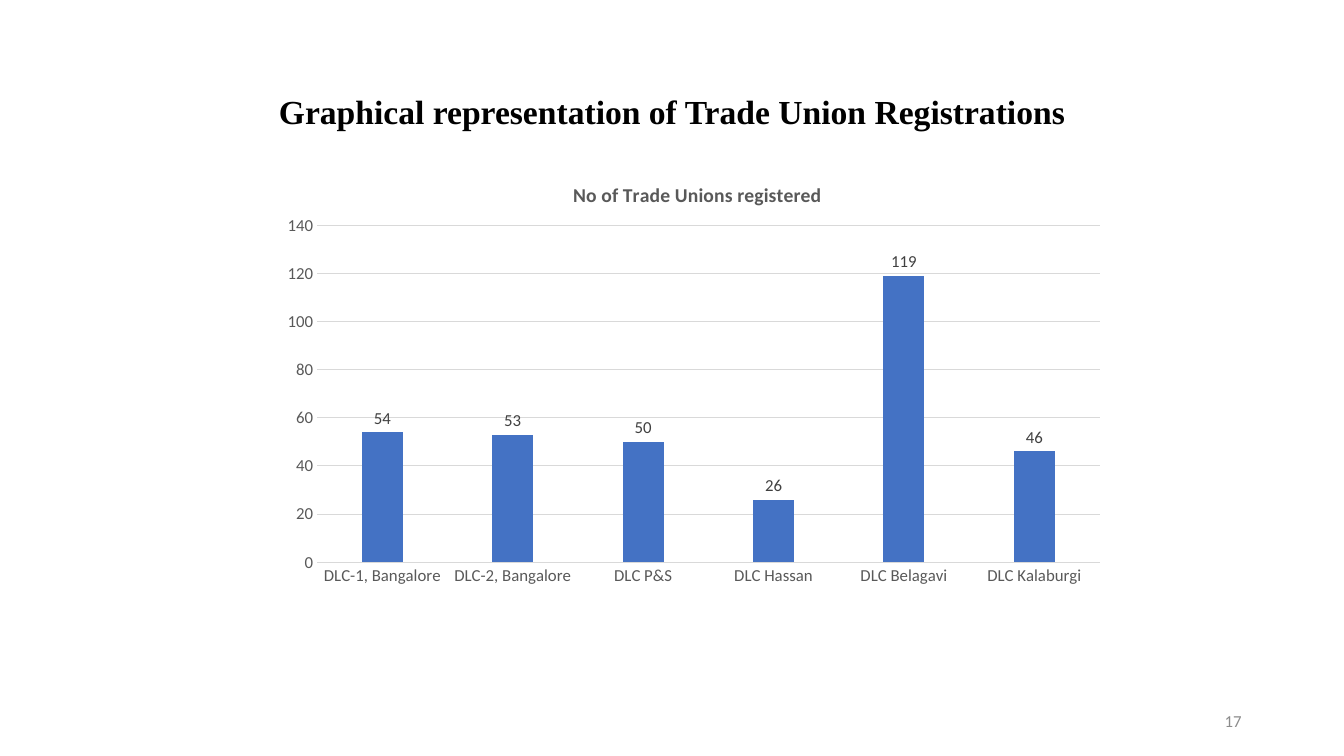
from lxml import etree
from pptx import Presentation
from pptx import util as u
from pptx.chart import data as cd
from pptx.dml.color import RGBColor
from pptx.enum import chart as ch, text
from pptx.oxml import ns

Pt = u.Pt
REGISTRATIONS = {
    "DLC-1, Bangalore": 54,
    "DLC-2, Bangalore": 53,
    "DLC P&S": 50,
    "DLC Hassan": 26,
    "DLC Belagavi": 119,
    "DLC Kalaburgi": 46,
}


def rgb(value):
    return RGBColor.from_string(value)


def set_font(font, size, color, name="Calibri", bold=False):
    font.size, font.name, font.bold = Pt(size), name, bold
    font.color.rgb = rgb(color)


def set_line(line, color):
    line.color.rgb = rgb(color)
    line.width = Pt(0.75)


def place(sp, left, top, width, height):
    sp.left, sp.top, sp.width, sp.height = map(Pt, (left, top, width, height))


def set_layout(parent, **fractions):
    layout = parent.find(ns.qn("c:layout"))
    if layout is None:
        layout = etree.Element(ns.qn("c:layout"))
        parent.insert(0, layout)
    manual = etree.SubElement(layout, ns.qn("c:manualLayout"))
    if "w" in fractions:
        etree.SubElement(manual, ns.qn("c:layoutTarget")).set("val", "inner")
    for axis in "xy":
        etree.SubElement(manual, ns.qn(f"c:{axis}Mode")).set("val", "edge")
    for key, value in fractions.items():
        etree.SubElement(manual, ns.qn(f"c:{key}")).set("val", str(value))


def add_title(s, words):
    sp = s.shapes.title
    place(sp, 66, 28.8, 828, 104.4)
    tf = sp.text_frame
    tf.text = words
    tf.word_wrap = True
    tf.vertical_anchor = text.MSO_ANCHOR.MIDDLE
    p = tf.paragraphs[0]
    p.alignment = text.PP_ALIGN.CENTER
    p.line_spacing = 0.9
    set_font(p.font, 24, "000000", "Times New Roman", True)


def add_page_number(s, number):
    sp = s.shapes.add_textbox(Pt(678), Pt(500.5), Pt(216), Pt(28.8))
    tf = sp.text_frame
    tf.word_wrap = True
    tf.vertical_anchor = text.MSO_ANCHOR.MIDDLE
    p = tf.paragraphs[0]
    p.text = number
    p.alignment = text.PP_ALIGN.RIGHT
    set_font(p.font, 12, "8C8C8C")


def style_axis(axis):
    axis.major_tick_mark = axis.minor_tick_mark = ch.XL_TICK_MARK.NONE
    set_font(axis.tick_labels.font, 12, "595959")


def add_column_chart(s, heading, values):
    data = cd.CategoryChartData()
    data.categories = list(values)
    data.add_series("Series 1", list(values.values()))
    frame = s.shapes.add_chart(ch.XL_CHART_TYPE.COLUMN_CLUSTERED,
                               Pt(196.5), Pt(111), Pt(601), Pt(312.5), data)
    chart = frame.chart
    set_font(chart.font, 12, "000000")
    chart.has_legend = False

    chart.has_title = True
    title = chart.chart_title
    p = title.text_frame.paragraphs[0]
    p.text = heading
    set_font(p.font, 14, "595959", bold=True)
    title.include_in_layout = False

    cat, val = chart.category_axis, chart.value_axis
    style_axis(cat)
    style_axis(val)
    set_line(cat.format.line, "D9D9D9")
    val.format.line.fill.background()
    val.minimum_scale, val.maximum_scale, val.major_unit = 0, 140, 20
    set_line(val.major_gridlines.format.line, "D9D9D9")

    plot = chart.plots[0]
    plot.gap_width, plot.overlap = 219, -27
    plot.vary_by_categories = False
    series = plot.series[0]
    series.format.fill.solid()
    series.format.fill.fore_color.rgb = rgb("4472C4")
    labels = series.data_labels
    labels.show_value = True
    labels.position = ch.XL_LABEL_POSITION.OUTSIDE_END
    set_font(labels.font, 12, "404040")

    set_layout(title._element, x=0.35, y=0.05)
    set_layout(plot._element.getparent(), x=0.05, y=0.16, w=0.93, h=0.77)


def main():
    prs = Presentation()
    prs.slide_width, prs.slide_height = Pt(960), Pt(540)
    s = prs.slides.add_slide(prs.slide_layouts[5])
    add_title(s, "Graphical representation of Trade Union Registrations")
    add_page_number(s, "17")
    add_column_chart(s, "No of Trade Unions registered", REGISTRATIONS)
    prs.save("out.pptx")


if __name__ == "__main__":
    main()
